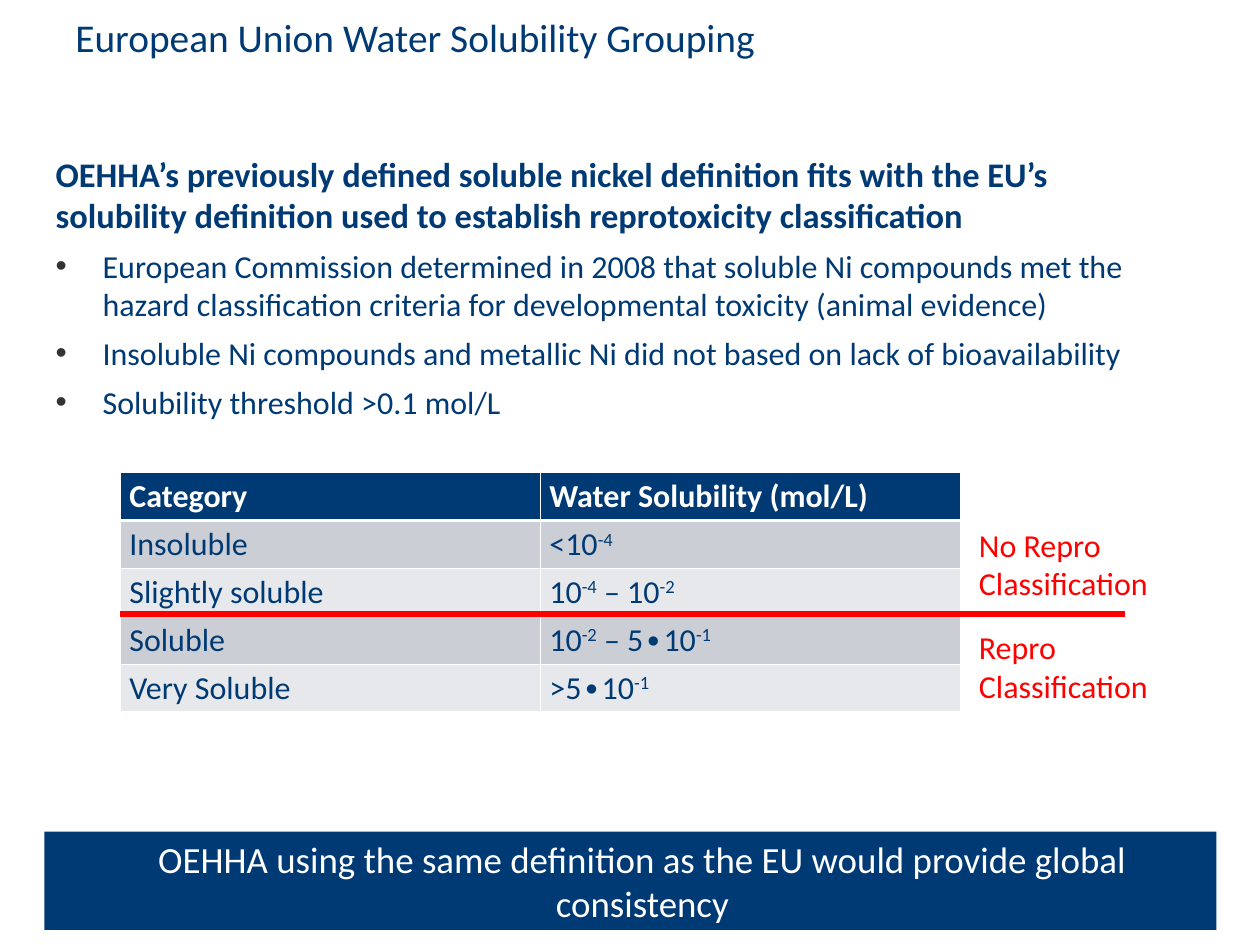
from lxml import etree
from pptx import Presentation
from pptx.dml.color import RGBColor
from pptx.enum.shapes import MSO_CONNECTOR as CONNECTOR, MSO_SHAPE as SHAPE
from pptx.enum.text import MSO_ANCHOR as ANCHOR, PP_ALIGN as ALIGN
from pptx.oxml.ns import qn
from pptx.util import Inches, Pt

NAVY, RED, WHITE = "003A74", "FF0000", "FFFFFF"
BANDS = ["CCCED6", "E7E8EB"]
ROWS = [
    ("Category", ["Water Solubility (mol/L)"]),
    ("Insoluble", ["<10", "-4"]),
    ("Slightly soluble", ["10", "-4", " – 10", "-2"]),
    ("Soluble", ["10", "-2", " – 5∙10", "-1"]),
    ("Very Soluble", [">5∙10", "-1"]),
]
HEADING = ("OEHHA’s previously defined soluble nickel definition fits with the EU’s "
           "solubility definition used to establish reprotoxicity classification")
BULLETS = [
    "European Commission determined in 2008 that soluble Ni compounds met the "
    "hazard classification criteria for developmental toxicity (animal evidence)",
    "Insoluble Ni compounds and metallic Ni did not based on lack of bioavailability",
    "Solubility threshold >0.1 mol/L",
]


def rgb(value):
    """Turn a hex string into a colour."""
    return RGBColor.from_string(value)


def sub(parent, tag, **attrs):
    """Append an XML element to a parent."""
    return etree.SubElement(parent, qn(tag), attrs)


def add_run(p, text, size, color, bold=False, superscript=False):
    """Add a formatted run to a paragraph."""
    r = p.add_run()
    r.text = text
    r.font.name, r.font.size, r.font.bold = "Calibri", Pt(size), bold
    r.font.color.rgb = rgb(color)
    if superscript:
        r.font._element.set("baseline", "30000")


def add_text(s, x, y, w, h, lines, size, color, inset=(0.1, 0.05)):
    """Add a wrapped text box with one paragraph per line."""
    tf = s.shapes.add_textbox(Inches(x), Inches(y), Inches(w), Inches(h)).text_frame
    tf.word_wrap = True
    tf.margin_left = tf.margin_right = Inches(inset[0])
    tf.margin_top = tf.margin_bottom = Inches(inset[1])
    for i, line in enumerate(lines):
        p = tf.add_paragraph() if i else tf.paragraphs[0]
        add_run(p, line, size, color)
    return tf


def add_bullet(p):
    """Give a paragraph a grey bullet and a hanging indent."""
    pPr = p._p.get_or_add_pPr()
    pPr.set("marL", str(Inches(0.53)))
    pPr.set("indent", str(-Inches(0.53)))
    sub(sub(pPr, "a:buClr"), "a:srgbClr", val="333333")
    sub(pPr, "a:buFont", typeface="Arial")
    sub(pPr, "a:buChar", char="•")


def add_body(s, x, y, w, h):
    """Add the bold heading and its bulleted points."""
    tf = add_text(s, x, y, w, h, [HEADING], 28, NAVY)
    tf.paragraphs[0].runs[0].font.bold = True
    for text in BULLETS:
        p = tf.add_paragraph()
        add_bullet(p)
        add_run(p, text, 26, NAVY)
    for p in tf.paragraphs:
        p.space_after = Pt(8.5)


def set_borders(cell, bottom):
    """Draw white borders around a cell."""
    tcPr = cell._tc.get_or_add_tcPr()
    for side in "LRTB":
        width = bottom if side == "B" else 1
        ln = sub(tcPr, f"a:ln{side}", w=str(Pt(width)))
        sub(sub(ln, "a:solidFill"), "a:srgbClr", val=WHITE)


def add_solubility_table(s, x, y, w, row_h):
    """Add the banded table of solubility categories."""
    table = s.shapes.add_table(len(ROWS), 2, Inches(x), Inches(y), Inches(w),
                               Inches(row_h * len(ROWS))).table
    for i, (category, solubility) in enumerate(ROWS):
        header = i == 0
        for j, parts in enumerate([[category], solubility]):
            cell = table.cell(i, j)
            set_borders(cell, 3 if header else 1)
            cell.fill.solid()
            cell.fill.fore_color.rgb = rgb(NAVY if header else BANDS[(i - 1) % 2])
            for k, part in enumerate(parts):
                add_run(cell.text_frame.paragraphs[0], part, 26,
                        WHITE if header else NAVY, header, k % 2 == 1)


def add_divider(s, x1, x2, y):
    """Add the thick red horizontal line."""
    line = s.shapes.add_connector(CONNECTOR.STRAIGHT, Inches(x1), Inches(y),
                                  Inches(x2), Inches(y))
    line.line.color.rgb = rgb(RED)
    line.line.width = Pt(5)
    sub(line._element.spPr, "a:effectLst")


def add_banner(s, x, y, w, h, text):
    """Add the filled conclusion bar."""
    sp = s.shapes.add_shape(SHAPE.RECTANGLE, Inches(x), Inches(y), Inches(w), Inches(h))
    sp.shadow.inherit = False
    sp.fill.solid()
    sp.fill.fore_color.rgb = rgb(NAVY)
    sp.line.fill.background()
    tf = sp.text_frame
    tf.word_wrap = True
    tf.vertical_anchor = ANCHOR.MIDDLE
    p = tf.paragraphs[0]
    p.alignment = ALIGN.CENTER
    p._p.get_or_add_pPr().set("marL", str(Inches(0.27)))
    add_run(p, text, 30, WHITE)


def main():
    """Build the slide and save it."""
    prs = Presentation()
    prs.slide_width, prs.slide_height = Inches(14.22), Inches(10.67)
    s = prs.slides.add_slide(prs.slide_layouts[6])
    add_text(s, 0.71, 0.08, 10.34, 1.18, ["European Union Water Solubility Grouping"],
             32, NAVY, (0.14, 0.07))
    add_solubility_table(s, 1.36, 5.34, 9.48, 0.54)
    add_divider(s, 1.36, 12.7, 6.93)
    for y, label in [(5.88, "No Repro"), (7.04, "Repro")]:
        add_text(s, 10.95, y, 2.33, 0.98, [label, "Classification"], 26, RED)
    add_body(s, 0.53, 1.68, 12.88, 3.17)
    add_banner(s, 0.5, 9.39, 13.23, 1.11,
               "OEHHA using the same definition as the EU would provide global consistency")
    prs.save("out.pptx")


if __name__ == "__main__":
    main()
